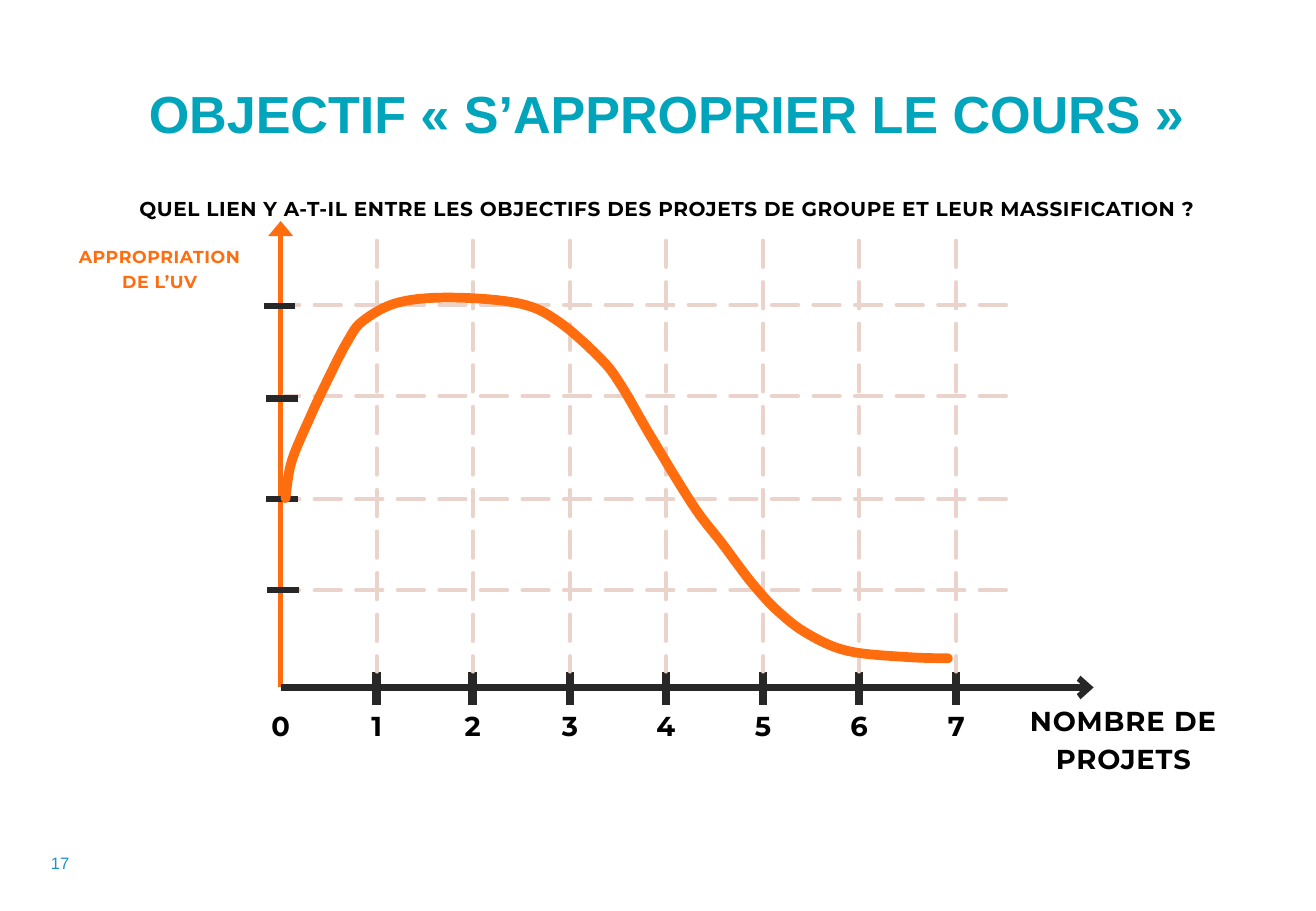
import math

import pptx
import pptx.dml.color
import pptx.enum.dml
import pptx.enum.shapes
import pptx.enum.text
import pptx.oxml.ns
import pptx.util

PX = 9144
ORANGE = "FF6D0F"
DARK = "272727"
GRID = "EAD3CA"
BLACK = "000000"
ALIGN = pptx.enum.text.PP_ALIGN

ORIGIN_X, AXIS_Y = 231, 566
PROJECT_COUNT = 7
FIRST_COLUMN, LAST_COLUMN = 310, 787
GRID_TOP, GRID_BOTTOM = 198, 553
GRID_LEFT, GRID_RIGHT = 233, 828
GRID_ROWS = (251, 326, 411, 486)
ROW_TICKS = ((217, 252), (219, 328), (219, 411), (220, 486))
ROW_TICK_LENGTH = 26

RISE = ((235, 410), (240, 380), (255, 344), (270, 312), (286, 281), (299, 264))
PLATEAU = ((328, 249), (372, 245), (428, 250), (460, 265))
FALL = ((494, 295), (511, 317), (536, 360), (571, 417), (594, 447), (618, 479))
TAIL = ((640, 503), (665, 522), (698, 536), (747, 541), (780, 542))
CURVE_KNOTS = RISE + PLATEAU + FALL + TAIL
CURVE_RADIUS = 4
STEPS = 8


def color(value):
    return pptx.dml.color.RGBColor.from_string(value)


def add_line(page, start, end, stroke, width, dashed=False, arrow=None):
    ends = [length * PX for length in (*start, *end)]
    line = page.shapes.add_connector(
        pptx.enum.shapes.MSO_CONNECTOR.STRAIGHT, *ends)
    line.line.color.rgb = color(stroke)
    line.line.width = pptx.util.Pt(width)
    properties = line.element.spPr
    outline = properties.find(pptx.oxml.ns.qn("a:ln"))
    if dashed:
        line.line.dash_style = pptx.enum.dml.MSO_LINE.LONG_DASH
        outline.set("cap", "rnd")
    if arrow:
        outline.append(
            outline.makeelement(pptx.oxml.ns.qn("a:tailEnd"), arrow))
    properties.append(
        properties.makeelement(pptx.oxml.ns.qn("a:effectLst"), {}))


def add_text(page, text, area, size, fill, align=ALIGN.CENTER,
             font="Montserrat", bold=True, leading=None, tracking=None,
             insets=(0, 0, 0, 0)):
    box = page.shapes.add_textbox(*(length * PX for length in area))
    frame = box.text_frame
    frame.word_wrap = True
    (frame.margin_left, frame.margin_top,
     frame.margin_right, frame.margin_bottom) = (
        length * PX for length in insets)
    para = frame.paragraphs[0]
    para.text = text
    para.alignment = align
    if leading:
        para.line_spacing = pptx.util.Pt(leading)
    para.font.name = font
    para.font.size = pptx.util.Pt(size)
    para.font.bold = bold
    para.font.color.rgb = color(fill)
    if tracking:
        for span in box.element.iter(pptx.oxml.ns.qn("a:r")):
            span.get_or_add_rPr().set("spc", str(tracking))
    return box


def spline(before, start, end, after, t):
    return tuple(
        b + t * (c - a) / 2
        + t ** 2 * (2 * a - 5 * b + 4 * c - d) / 2
        + t ** 3 * (3 * b - a - 3 * c + d) / 2
        for a, b, c, d in zip(before, start, end, after))


def smooth(knots):
    padded = (knots[0], *knots, knots[-1])
    points = [spline(*padded[i:i + 4], step / STEPS)
              for i in range(len(knots) - 1) for step in range(STEPS)]
    return points + [knots[-1]]


def at_angle(center, angle, radius):
    return (center[0] + radius * math.cos(angle),
            center[1] + radius * math.sin(angle))


def thicken(points, radius):
    last = len(points) - 1
    headings = []
    for i in range(last + 1):
        x0, y0 = points[max(i - 1, 0)]
        x1, y1 = points[min(i + 1, last)]
        headings.append(math.atan2(y1 - y0, x1 - x0))
    quarter = math.pi / 2
    turns = [math.pi * step / STEPS for step in range(1, STEPS)]
    upper = [at_angle(point, heading - quarter, radius)
             for point, heading in zip(points, headings)]
    lower = [at_angle(point, heading + quarter, radius)
             for point, heading in zip(points, headings)]
    end_cap = [at_angle(points[-1], headings[-1] - quarter + turn, radius)
               for turn in turns]
    start_cap = [at_angle(points[0], headings[0] + quarter + turn, radius)
                 for turn in turns]
    return upper + end_cap + lower[::-1] + start_cap


def add_curve(page, knots, radius, fill):
    outline = [(x * PX, y * PX) for x, y in thicken(smooth(knots), radius)]
    builder = page.shapes.build_freeform(*outline[0])
    builder.add_line_segments(outline[1:], close=True)
    curve = builder.convert_to_shape()
    curve.shadow.inherit = False
    curve.fill.solid()
    curve.fill.fore_color.rgb = color(fill)
    curve.line.fill.background()


def project_columns():
    span = LAST_COLUMN - FIRST_COLUMN
    return [FIRST_COLUMN + span * i // (PROJECT_COUNT - 1)
            for i in range(PROJECT_COUNT)]


def add_axes(page, columns):
    origin = (ORIGIN_X, AXIS_Y)
    add_line(page, origin, (ORIGIN_X, 182), ORANGE, 3,
             arrow={"type": "triangle", "w": "lg"})
    add_line(page, origin, (900, AXIS_Y), DARK, 4,
             arrow={"type": "arrow", "len": "sm"})
    for x in columns:
        add_line(page, (x, 580), (x, GRID_BOTTOM), DARK, 5)
    for number, x in enumerate((ORIGIN_X, *columns)):
        add_text(page, str(number), (x - 10, 588, 20, 24), 16.2, BLACK,
                 leading=16.7)
    add_text(page, "APPROPRIATION DE L’UV", (61, 200, 141, 38), 10.3, ORANGE,
             leading=14.4, tracking=30)
    add_text(page, "NOMBRE DE PROJETS", (831, 575, 187, 62), 16.2, BLACK,
             leading=22.8, tracking=50)


def add_grid(page, columns):
    for x in columns:
        add_line(page, (x, GRID_TOP), (x, GRID_BOTTOM), GRID, 2.25, dashed=True)
    for y in GRID_ROWS:
        add_line(page, (GRID_RIGHT, y), (GRID_LEFT, y), GRID, 2.25, dashed=True)
    for left, y in ROW_TICKS:
        add_line(page, (left, y), (left + ROW_TICK_LENGTH, y), DARK, 3.75)


def add_headings(page):
    add_text(page, "QUEL LIEN Y A-T-IL ENTRE LES OBJECTIFS DES PROJETS DE "
             "GROUPE ET LEUR MASSIFICATION ?", (110, 158, 878, 22), 11.9,
             BLACK, leading=16.7, tracking=37)
    add_text(page, "OBJECTIF « S’APPROPRIER LE COURS »", (82, 59, 933, 74),
             30.9, "00A4BB", font="Arial", leading=39.6,
             insets=(10, 5, 10, 5))


def add_page_number(page):
    number = add_text(page, "17", (14, 697, 43, 27), 9.8, "2392C9",
                      align=ALIGN.RIGHT, font="Arial", bold=False,
                      insets=(10, 5, 0, 5))
    number.text_frame.vertical_anchor = pptx.enum.text.MSO_ANCHOR.MIDDLE


def main():
    deck = pptx.Presentation()
    deck.slide_width = 1083 * PX
    deck.slide_height = 750 * PX
    page = deck.slides.add_slide(deck.slide_layouts[6])
    columns = project_columns()
    add_axes(page, columns)
    add_grid(page, columns)
    add_curve(page, CURVE_KNOTS, CURVE_RADIUS, ORANGE)
    add_headings(page)
    add_page_number(page)
    deck.save("out.pptx")


if __name__ == "__main__":
    main()
